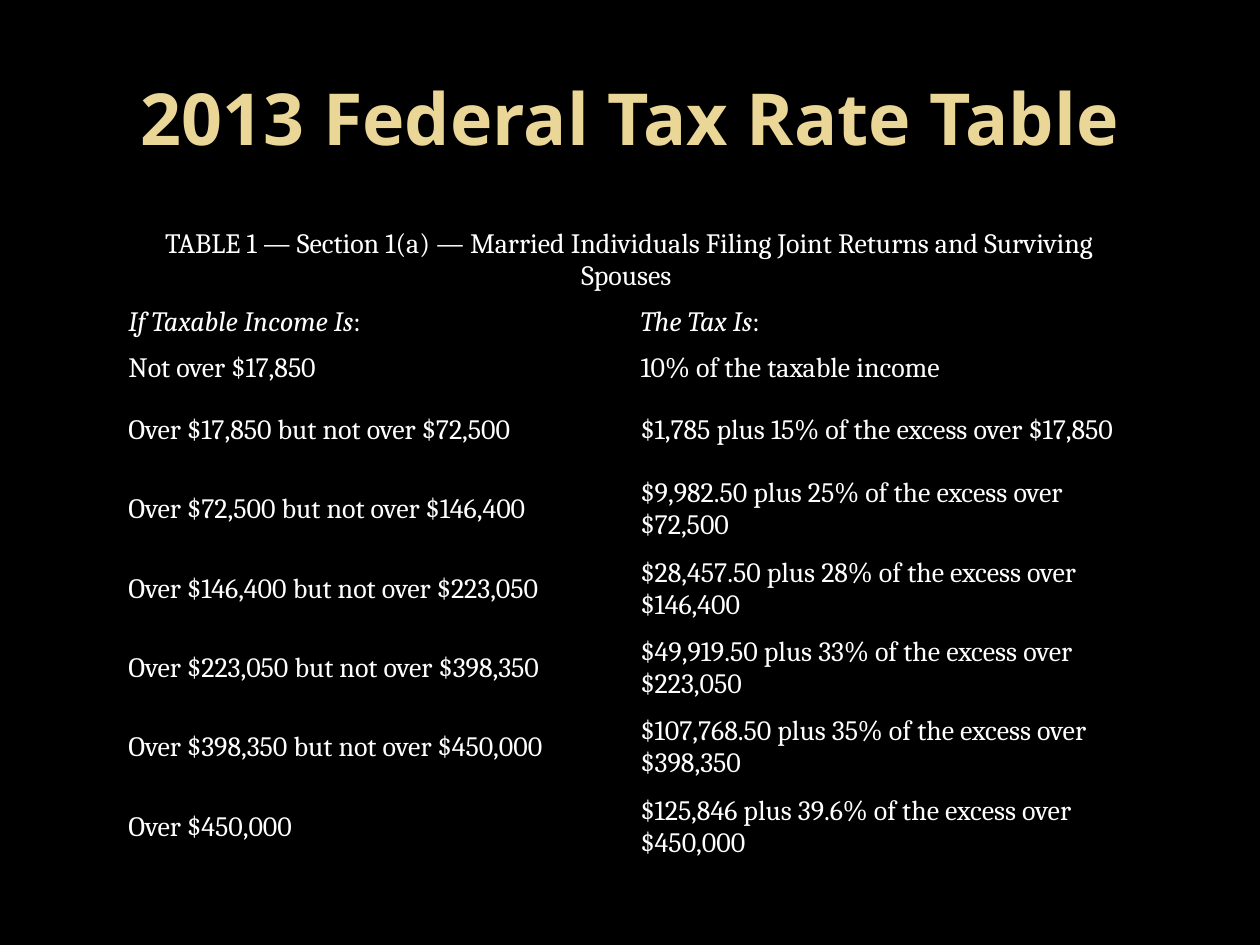
"""Build a slide with the 2013 federal tax rate table."""
from typing import NamedTuple

from pptx import Presentation
from pptx.dml.color import RGBColor
from pptx.enum.text import MSO_ANCHOR, PP_ALIGN
from pptx.util import Inches, Pt

MIDDLE = MSO_ANCHOR.MIDDLE
LEFT, CENTER = PP_ALIGN.LEFT, PP_ALIGN.CENTER
COLORS = {"background": "000000", "title": "EAD696", "body": "FFFFFF"}
NO_GRID_STYLE = "{2D5ABB26-0587-4C30-8999-92F81FD0307C}"
TITLE_ONLY = 5
SHORT_ROW, TALL_ROW = 0.36, 0.63
CAPTION = "TABLE 1 — Section 1(a) — Married Individuals Filing Joint Returns and Surviving Spouses "


class Style(NamedTuple):
    font: str
    size: int
    color: str
    bold: bool = False
    italic: bool = False


class Bracket(NamedTuple):
    income: str
    tax: str
    height: float = TALL_ROW


TITLE = Style("Noto Sans", 41, "title", bold=True)
BODY = Style("Cambria", 16, "body")
HEADING = BODY._replace(italic=True)
HEADINGS = ("If Taxable Income Is", "The Tax Is")
BRACKETS = [
    Bracket("Not over $17,850", "10% of the taxable income", SHORT_ROW),
    Bracket("Over $17,850 but not over $72,500", "$1,785 plus 15% of the excess over $17,850"),
    Bracket("Over $72,500 but not over $146,400", "$9,982.50 plus 25% of the excess over $72,500"),
    Bracket("Over $146,400 but not over $223,050", "$28,457.50 plus 28% of the excess over $146,400"),
    Bracket("Over $223,050 but not over $398,350", "$49,919.50 plus 33% of the excess over $223,050"),
    Bracket("Over $398,350 but not over $450,000", "$107,768.50 plus 35% of the excess over $398,350"),
    Bracket("Over $450,000", "$125,846 plus 39.6% of the excess over $450,000"),
]


def color(name: str) -> RGBColor:
    return RGBColor.from_string(COLORS[name])


def write(para, spans: list[tuple[str, Style]], align=LEFT) -> None:
    para.alignment = align
    for text, style in spans:
        span = para.add_run()
        span.text = text
        span.font.name = style.font
        span.font.size = Pt(style.size)
        span.font.bold = style.bold
        span.font.italic = style.italic
        span.font.color.rgb = color(style.color)


def fill_cell(cell, spans: list[tuple[str, Style]], align=LEFT) -> None:
    cell.vertical_anchor = MIDDLE
    cell.margin_left = cell.margin_right = Inches(0.09)
    cell.margin_top = cell.margin_bottom = Inches(0.05)
    cell.fill.background()
    write(cell.text_frame.paragraphs[0], spans, align)


def add_title(page) -> None:
    title = page.shapes.title
    title.left, title.top = Inches(0.5), Inches(0.3)
    title.width, title.height = Inches(9), Inches(1.25)
    title.text_frame.vertical_anchor = MIDDLE
    write(title.text_frame.paragraphs[0], [("2013 Federal Tax Rate Table", TITLE)], CENTER)


def add_tax_table(page) -> None:
    heights = [TALL_ROW, SHORT_ROW] + [bracket.height for bracket in BRACKETS]
    frame = page.shapes.add_table(
        len(heights), 2, Inches(0.93), Inches(1.75), Inches(8.13), Inches(sum(heights)))
    table = frame.table
    table.first_row = table.horz_banding = False
    table._tbl.tblPr[0].text = NO_GRID_STYLE
    for row, height in zip(table.rows, heights):
        row.height = Inches(height)

    table.cell(0, 0).merge(table.cell(0, 1))
    fill_cell(table.cell(0, 0), [(CAPTION, BODY)], CENTER)
    for column, heading in enumerate(HEADINGS):
        fill_cell(table.cell(1, column), [(heading, HEADING), (":", BODY)])
    for row, bracket in enumerate(BRACKETS, start=2):
        for column, text in enumerate((bracket.income, bracket.tax)):
            fill_cell(table.cell(row, column), [(text, BODY)])


def main() -> None:
    deck = Presentation()
    deck.slide_width, deck.slide_height = Inches(10), Inches(7.5)
    page = deck.slides.add_slide(deck.slide_layouts[TITLE_ONLY])
    page.background.fill.solid()
    page.background.fill.fore_color.rgb = color("background")
    add_title(page)
    add_tax_table(page)
    deck.save("out.pptx")


if __name__ == "__main__":
    main()
